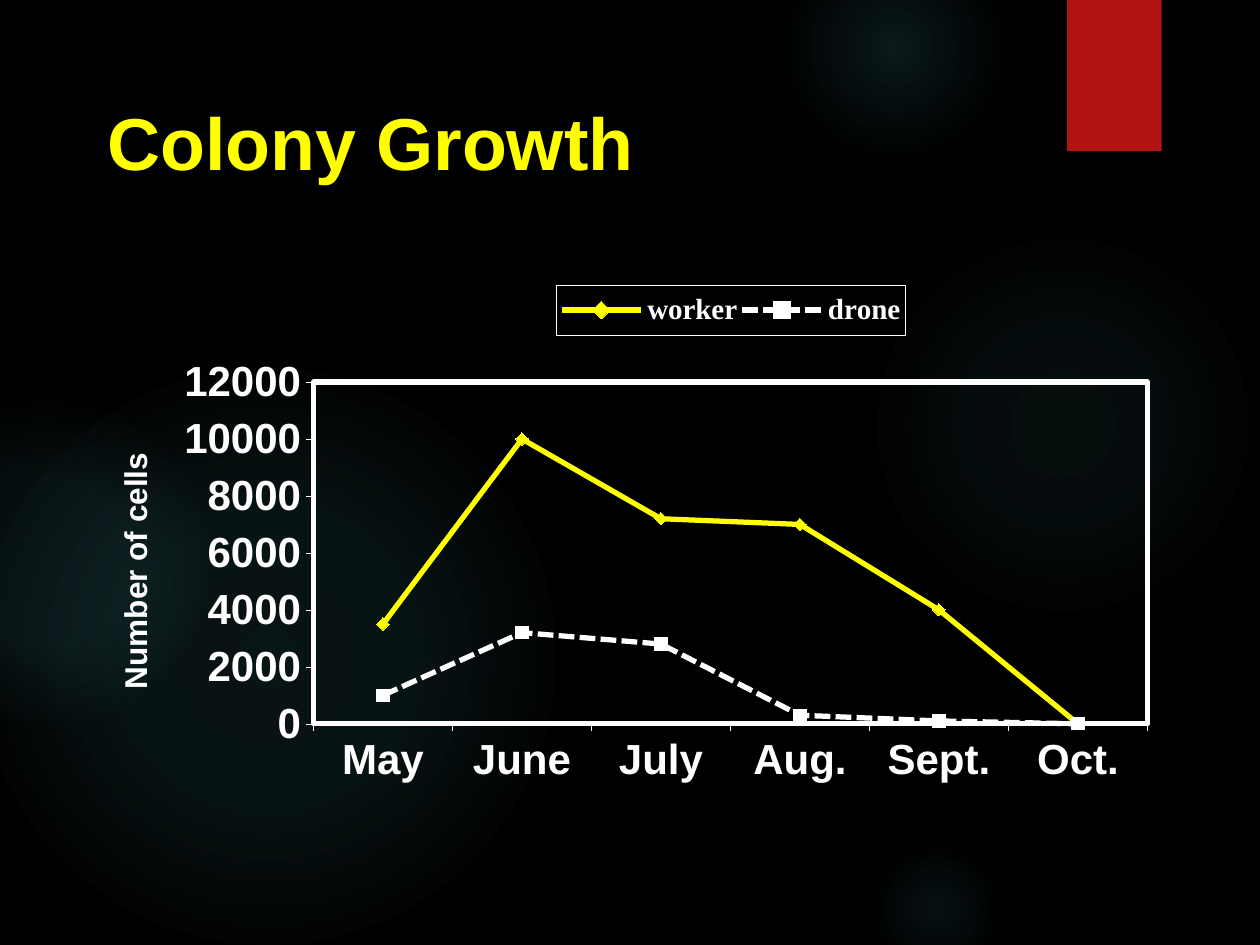
from lxml import etree
from pptx import Presentation
from pptx import util as u
from pptx.chart.data import CategoryChartData
from pptx.dml.color import RGBColor
from pptx.enum import chart as ch, dml, shapes, text
from pptx.oxml import parse_xml
from pptx.oxml.ns import nsdecls, qn

BLACK = RGBColor(0x00, 0x00, 0x00)
WHITE = RGBColor(0xFF, 0xFF, 0xFF)
YELLOW = RGBColor(0xFF, 0xFF, 0x00)
RED = RGBColor(0xB0, 0x15, 0x13)
GLOW = RGBColor(0x50, 0xB9, 0xC1)
SANS, SERIF = "Arial", "Times New Roman"

TITLE = "Colony Growth"
AXIS_TITLE = "Number of cells"
MONTHS = ["May", "June", "July", "Aug.", "Sept.", "Oct."]
SERIES = [
    ("worker", [3500, 10000, 7200, 7000, 4000, 0], YELLOW,
     ch.XL_MARKER_STYLE.DIAMOND, dml.MSO_LINE.SOLID),
    ("drone", [1000, 3200, 2800, 300, 100, 0], WHITE,
     ch.XL_MARKER_STYLE.SQUARE, dml.MSO_LINE.SQUARE_DOT),
]
GLOWS = [
    (6.89, 1.83, 3.08, [(0, 7), (36, 6), (69, 0)]),
    (6.22, -0.5, 1.75, [(0, 14), (36, 7), (73, 0)]),
    (6.89, 6.67, 1.08, [(0, 9), (36, 5), (66, 0)]),
    (-0.17, 2.92, 4.58, [(0, 11), (36, 10), (75, 0)]),
    (-0.92, 3.17, 2.58, [(0, 8), (36, 8), (72, 0)]),
]


def style(font, size, color=WHITE, name=SANS):
    font.size, font.bold, font.name = u.Pt(size), True, name
    font.color.rgb = color


def put_text(tf, content, **fmt):
    p = tf.paragraphs[0]
    r = p.add_run()
    r.text = content
    style(r.font, **fmt)
    return p


def add_shape(s, kind, x, y, w, h):
    sp = s.shapes.add_shape(kind, *map(u.Inches, (x, y, w, h)))
    sp.shadow.inherit = False
    sp.line.fill.background()
    return sp


def add_glow(s, x, y, size, stops):
    sp = add_shape(s, shapes.MSO_SHAPE.OVAL, x, y, size, size)
    sp.fill.background()
    gs = "".join(
        f'<a:gs pos="{pos * 1000}"><a:srgbClr val="{GLOW}">'
        f'<a:alpha val="{alpha * 1000}"/></a:srgbClr></a:gs>'
        for pos, alpha in stops)
    grad = parse_xml(
        f'<a:gradFill {nsdecls("a")}><a:gsLst>{gs}</a:gsLst><a:path path="circle">'
        '<a:fillToRect l="50000" t="50000" r="50000" b="50000"/></a:path></a:gradFill>')
    pr = sp.element.spPr
    pr.replace(pr.find(qn("a:noFill")), grad)


def set_layout(el, before, inner=False, **pos):
    for old in el.findall(qn("c:layout")):
        el.remove(old)
    layout = etree.Element(qn("c:layout"))
    manual = etree.SubElement(layout, qn("c:manualLayout"))
    if inner:
        etree.SubElement(manual, qn("c:layoutTarget"), val="inner")
    for key in ("x", "y"):
        etree.SubElement(manual, qn(f"c:{key}Mode"), val="edge")
    for key, value in pos.items():
        etree.SubElement(manual, qn(f"c:{key}"), val=str(value))
    el.find(qn(before)).addprevious(layout)


def outline(points):
    return parse_xml(
        f'<c:spPr {nsdecls("c", "a")}><a:noFill/><a:ln w="{u.Pt(points)}">'
        f'<a:solidFill><a:srgbClr val="{WHITE}"/></a:solidFill></a:ln></c:spPr>')


def add_growth_chart(s):
    data = CategoryChartData(number_format="0")
    data.categories = MONTHS
    for name, values, *_ in SERIES:
        data.add_series(name, values)
    chart = s.shapes.add_chart(
        ch.XL_CHART_TYPE.LINE_MARKERS,
        *map(u.Inches, (0.81, 2.22, 8.39, 4.39)), data).chart
    style(chart.font, 18, name=SERIF)
    chart.has_title = False
    plot = chart.plots[0]
    plot.vary_by_categories = False
    for ser, (_, _, color, marker, dash) in zip(plot.series, SERIES):
        ser.smooth = False
        ser.format.line.color.rgb = color
        ser.format.line.width = u.Pt(3)
        ser.format.line.dash_style = dash
        ser.marker.style, ser.marker.size = marker, 7
        ser.marker.format.fill.solid()
        ser.marker.format.fill.fore_color.rgb = color
        ser.marker.format.line.color.rgb = color

    val = chart.value_axis
    for axis in (chart.category_axis, val):
        axis.has_major_gridlines = False
        axis.major_tick_mark = ch.XL_TICK_MARK.OUTSIDE
        axis.format.line.color.rgb = WHITE
        axis.format.line.width = u.Pt(0.25)
        style(axis.tick_labels.font, 24)
    val.minimum_scale, val.maximum_scale, val.major_unit = 0, 12000, 2000
    val.tick_labels.number_format = "0"
    val.tick_labels.number_format_is_linked = False
    put_text(val.axis_title.text_frame, AXIS_TITLE, size=18)

    chart.has_legend = True
    legend = chart.legend
    legend.position = ch.XL_LEGEND_POSITION.TOP
    legend.include_in_layout = False
    style(legend.font, 16.6, name=SERIF)

    area = chart.element.find(".//" + qn("c:plotArea"))
    box = chart.element.find(".//" + qn("c:legend"))
    set_layout(area, "c:lineChart", inner=True, x=0.2, y=0.185, w=0.789, h=0.618)
    set_layout(box, "c:overlay", x=0.43, y=0.01, w=0.33, h=0.09)
    area.append(outline(3))
    box.find(qn("c:overlay")).addnext(outline(0.25))


def main():
    prs = Presentation()
    prs.slide_width, prs.slide_height = u.Inches(10), u.Inches(7.5)
    s = prs.slides.add_slide(prs.slide_layouts[5])
    s.background.fill.solid()
    s.background.fill.fore_color.rgb = BLACK

    for glow in GLOWS:
        add_glow(s, *glow)
    tab = add_shape(s, shapes.MSO_SHAPE.RECTANGLE, 8.47, 0, 0.75, 1.2)
    tab.fill.solid()
    tab.fill.fore_color.rgb = RED

    title = s.shapes.title
    title.left, title.top, title.width, title.height = map(
        u.Inches, (0.75, 0.67, 8.5, 1.25))
    tf = title.text_frame
    tf.vertical_anchor = text.MSO_ANCHOR.TOP
    tf.margin_top = u.Inches(0.1)
    p = put_text(tf, TITLE, size=42, color=YELLOW)
    p.alignment = text.PP_ALIGN.LEFT
    title.element.getparent().append(title.element)

    add_growth_chart(s)
    prs.save("out.pptx")


if __name__ == "__main__":
    main()
